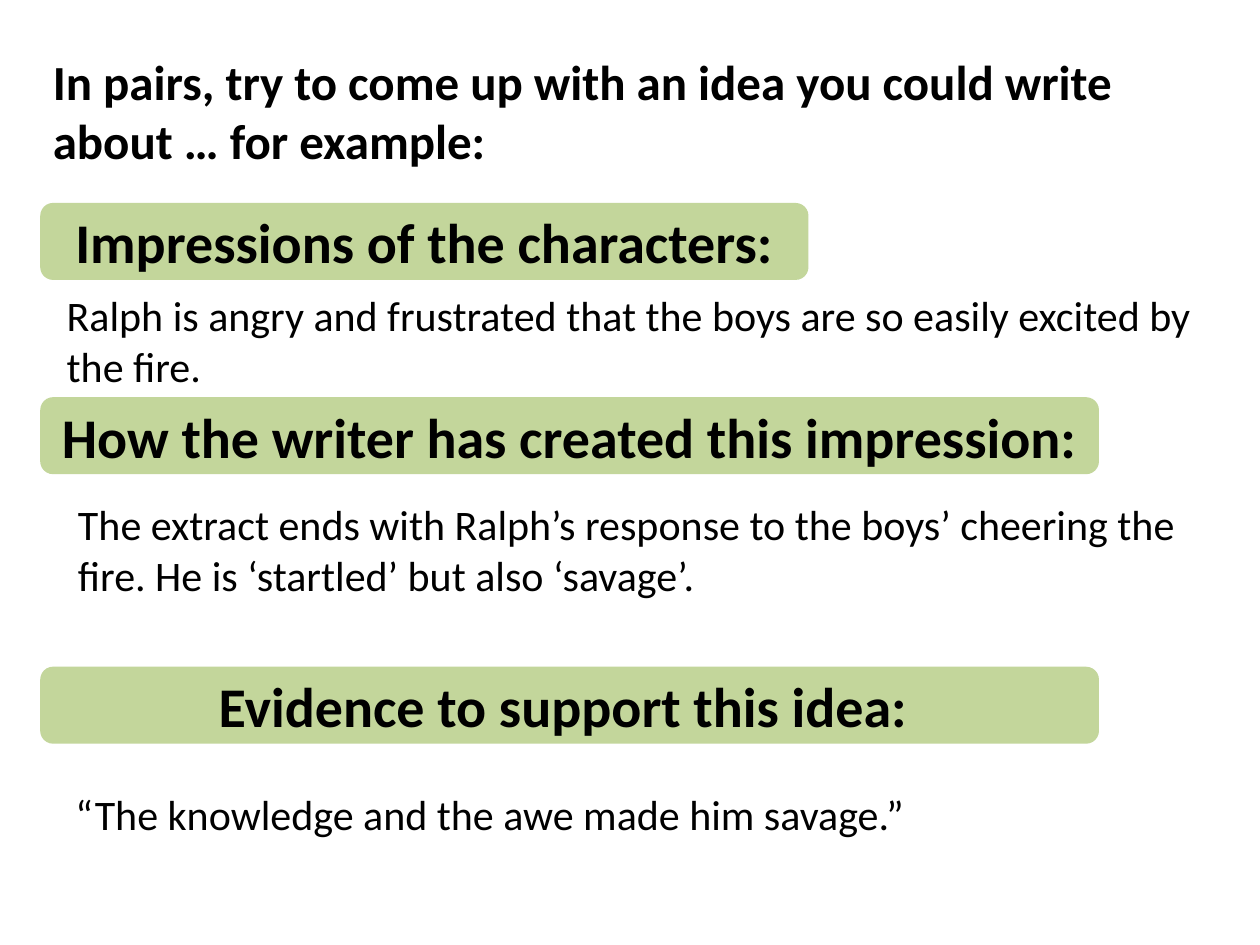
from pptx import Presentation
from pptx.dml.color import RGBColor
from pptx.enum.shapes import MSO_SHAPE
from pptx.enum.text import MSO_ANCHOR, MSO_AUTO_SIZE, PP_ALIGN
from pptx.util import Pt

BLACK = RGBColor(0x00, 0x00, 0x00)
GREEN = RGBColor(0xC3, 0xD6, 0x9B)
LEFT = 23
BAR_HEIGHT = 44


def write(box, text, size, bold, align, anchor):
    frame = box.text_frame
    frame.text = text
    frame.word_wrap = True
    frame.auto_size = MSO_AUTO_SIZE.NONE
    frame.vertical_anchor = anchor
    para = frame.paragraphs[0]
    para.alignment = align
    font = para.runs[0].font
    font.name = "Calibri"
    font.size = Pt(size)
    font.bold = bold
    font.color.rgb = BLACK


deck = Presentation()
deck.slide_width, deck.slide_height = Pt(720), Pt(540)
page = deck.slides.add_slide(deck.slide_layouts[5])

title = page.shapes.title
title.left, title.top, title.width, title.height = Pt(LEFT), Pt(26), Pt(664.5), Pt(75)
write(title, "In pairs, try to come up with an idea you could write about … for example:",
      28, True, PP_ALIGN.LEFT, MSO_ANCHOR.TOP)

# heading, bar top, bar width, answer, answer left, top, width, height
sections = [
    ("Impressions of the characters:", 116, 439,
     "Ralph is angry and frustrated that the boys are so easily excited by the fire.",
     31, 162, 669, 65.5),
    ("How the writer has created this impression: ", 227, 605,
     "The extract ends with Ralph’s response to the boys’ cheering the fire. "
     "He is ‘startled’ but also ‘savage’.",
     37.5, 281.5, 662.5, 65.5),
    ("Evidence to support this idea: ", 381, 605,
     "“The knowledge and the awe made him savage.”",
     36, 447, 635, 36),
]

for heading, bar_top, bar_width, answer, left, top, width, height in sections:
    bar = page.shapes.add_shape(MSO_SHAPE.ROUNDED_RECTANGLE, Pt(LEFT), Pt(bar_top),
                                Pt(bar_width), Pt(BAR_HEIGHT))
    bar.shadow.inherit = False
    bar.fill.solid()
    bar.fill.fore_color.rgb = GREEN
    bar.line.fill.background()
    write(bar, heading, 32, True, PP_ALIGN.CENTER, MSO_ANCHOR.MIDDLE)

    box = page.shapes.add_textbox(Pt(left), Pt(top), Pt(width), Pt(height))
    write(box, answer, 24, False, PP_ALIGN.LEFT, MSO_ANCHOR.TOP)

deck.save("out.pptx")
